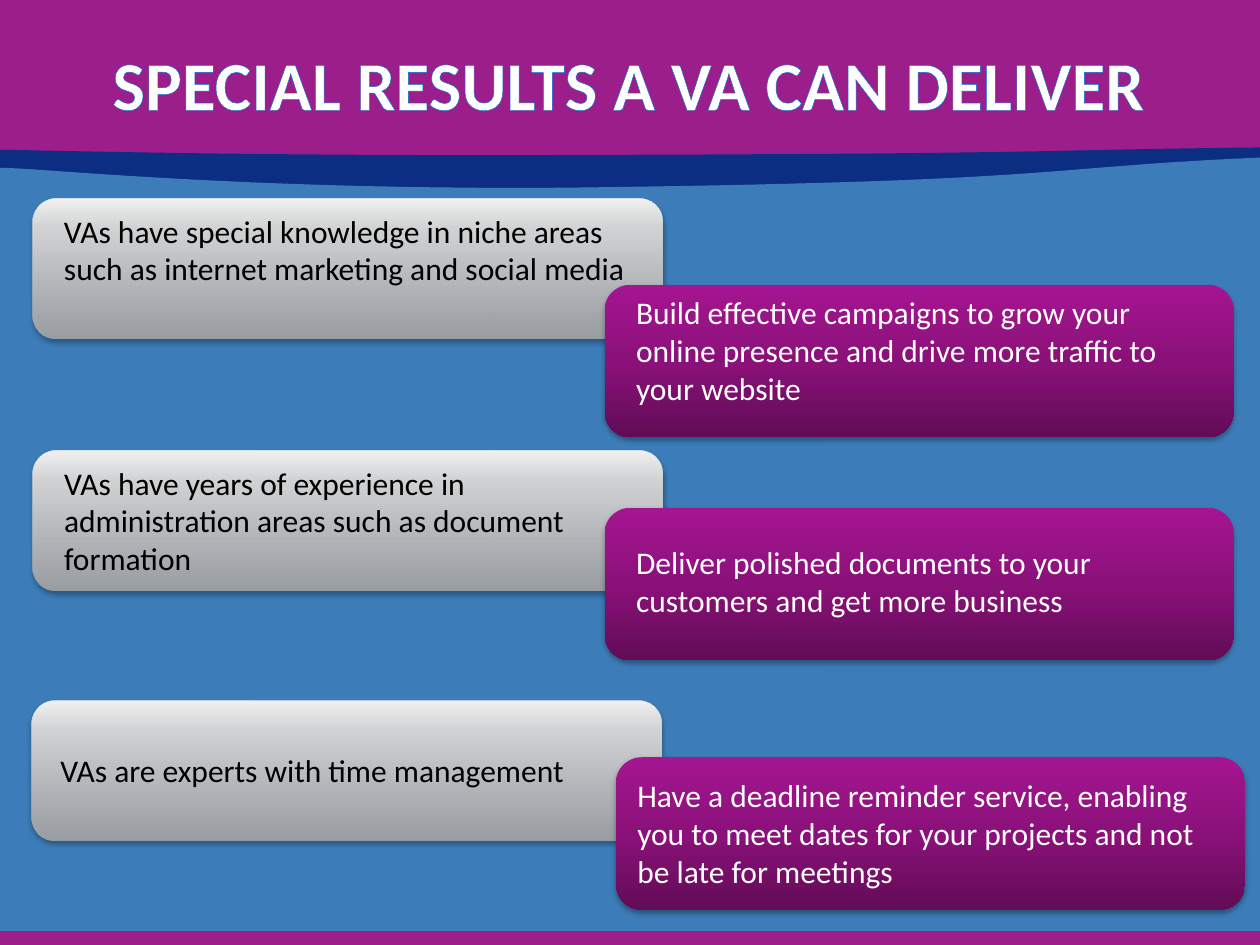
from lxml.etree import SubElement as Sub
from pptx import Presentation
from pptx.dml.color import RGBColor as RGB
from pptx.enum.shapes import MSO_SHAPE as Shape
from pptx.enum.text import MSO_ANCHOR as Anchor, PP_ALIGN as Align
from pptx.oxml.ns import qn
from pptx.util import Inches, Pt

PLUM = RGB(0x9C, 0x1E, 0x8A)
NAVY = RGB(0x0B, 0x2E, 0x82)
BLUE = RGB(0x3C, 0x7D, 0xB9)
EDGE = RGB(0x00, 0x70, 0xD5)
WHITE = RGB(0xFF, 0xFF, 0xFF)
BLACK = RGB(0x00, 0x00, 0x00)

SILVER = [(0, RGB(0xF2, 0xF2, 0xF2), 100), (20, RGB(0xD9, 0xD9, 0xD9), 96),
          (100, RGB(0xA6, 0xA6, 0xA6), 89)]
GRAPE = [(0, RGB(0xA5, 0x15, 0x91), 100), (50, RGB(0x8B, 0x11, 0x7A), 100),
         (100, RGB(0x62, 0x0C, 0x56), 100)]

LEFT = {"size": (5, 1.11), "stops": SILVER, "color": BLACK}
RIGHT = {"size": (4.99, 1.21), "stops": GRAPE, "color": WHITE}
BODY = {"name": "Calibri", "size": Pt(18)}
HEAD = {"name": "Calibri", "size": Pt(39.6), "bold": True}

CARDS = [
    (LEFT, (0.26, 1.58), (0.41, 1.63, 4.67, 0.71),
     "VAs have special knowledge in niche areas such as internet marketing and social media"),
    (RIGHT, (4.8, 2.26), (4.95, 2.28, 4.5, 1.01),
     "Build effective campaigns to grow your online presence and drive more traffic to your website"),
    (LEFT, (0.26, 3.58), (0.41, 3.63, 4.72, 1.01),
     "VAs have years of experience in administration areas such as document formation"),
    (RIGHT, (4.8, 4.03), (4.95, 4.26, 4.41, 0.71),
     "Deliver polished documents to your customers and get more business"),
    (LEFT, (0.25, 5.56), (0.38, 5.91, 4.72, 0.4),
     "VAs are experts with time management"),
    (RIGHT, (4.89, 6.01), (4.96, 6.11, 4.67, 1.01),
     "Have a deadline reminder service, enabling you to meet dates for your projects and not be late for meetings"),
]

NAVY_TOP = [(-0.03, 1.19), (-0.03, 1.18), (1.61, 1.24), (4.48, 1.23),
            (8.52, 1.22), (8.16, 1.19), (10, 1.17)]
BLUE_TOP = [(-0.03, 1.34), (-0.03, 1.29), (1.61, 1.51), (4.49, 1.49),
            (8.53, 1.44), (8.17, 1.33), (10.01, 1.25)]


def paint(shape, color):
    """Give a shape a flat fill with no line or shadow."""
    shape.shadow.inherit = False
    shape.fill.solid()
    shape.fill.fore_color.rgb = color
    shape.line.fill.background()


def add_bar(shapes, box, color):
    """Add a flat rectangle."""
    paint(shapes.add_shape(Shape.RECTANGLE, *map(Inches, box)), color)


def curve(knots, steps=24):
    """Return points along a chain of cubic curves."""
    points = [knots[0]]
    for i in range(0, len(knots) - 1, 3):
        for n in range(1, steps + 1):
            t = n / steps
            u = 1 - t
            parts = (u ** 3, 3 * u * u * t, 3 * u * t * t, t ** 3)
            points.append(tuple(sum(w * p[axis] for w, p in zip(parts, knots[i:i + 4]))
                                for axis in (0, 1)))
    return points


def add_wave(shapes, knots, base, color):
    """Add a block with a curved top edge and a flat base."""
    points = curve(knots) + [(knots[-1][0], base), (knots[0][0], base)]
    first, *rest = [(Inches(x), Inches(y)) for x, y in points]
    pen = shapes.build_freeform(*first)
    pen.add_line_segments(rest, close=True)
    paint(pen.convert_to_shape(), color)


def add_tint(node, color, alpha):
    """Add a colour with its opacity in percent to an XML node."""
    tint = Sub(node, qn("a:srgbClr"), val=str(color))
    if alpha < 100:
        Sub(tint, qn("a:alpha"), val=str(alpha * 1000))


def shade(shape, stops):
    """Fill a shape from top to bottom and add a soft shadow."""
    shape.fill.gradient()
    shape.fill.gradient_angle = 270
    shape.line.fill.background()
    shape.shadow.inherit = False
    props = shape.element.spPr
    ramp = props.find(".//" + qn("a:gsLst"))
    for old in list(ramp):
        ramp.remove(old)
    for place, color, alpha in stops:
        add_tint(Sub(ramp, qn("a:gs"), pos=str(place * 1000)), color, alpha)
    drop = Sub(props.find(qn("a:effectLst")), qn("a:outerShdw"), blurRad=str(Pt(3.1)),
               dist=str(Pt(1.8)), dir="5400000", rotWithShape="0")
    add_tint(drop, BLACK, 35)


def add_text(shapes, box, text, style, color):
    """Add a wrapped text box and return it with its run."""
    label = shapes.add_textbox(*map(Inches, box))
    label.text_frame.word_wrap = True
    run = label.text_frame.paragraphs[0].add_run()
    run.text = text
    for key, value in style.items():
        setattr(run.font, key, value)
    run.font.color.rgb = color
    return label, run


def add_title(shapes, box, text):
    """Add the centred title with outlined letters."""
    label, run = add_text(shapes, box, text, HEAD, WHITE)
    label.text_frame.vertical_anchor = Anchor.MIDDLE
    label.text_frame.paragraphs[0].alignment = Align.CENTER
    props = run.font.fill and run._r.get_or_add_rPr()
    line = props.makeelement(qn("a:ln"), {"w": str(Pt(1))})
    add_tint(Sub(line, qn("a:solidFill")), EDGE, 100)
    props.insert(0, line)


def add_card(shapes, kind, spot, box, text):
    """Add a grouped rounded card and its text."""
    group = shapes.add_group_shape().shapes
    card = group.add_shape(Shape.ROUNDED_RECTANGLE, *map(Inches, spot + kind["size"]))
    shade(card, kind["stops"])
    add_text(group, box, text, BODY, kind["color"])


def main():
    """Build and save the slide."""
    deck = Presentation()
    deck.slide_width, deck.slide_height = Inches(10), Inches(7.5)
    shapes = deck.slides.add_slide(deck.slide_layouts[6]).shapes
    add_bar(shapes, (-0.03, 0, 10.04, 1.75), PLUM)
    add_wave(shapes, NAVY_TOP, 2.92, NAVY)
    add_wave(shapes, BLUE_TOP, 7.5, BLUE)
    add_bar(shapes, (-0.03, 7.39, 10.04, 0.17), PLUM)
    add_title(shapes, (0.49, 0.03, 9, 1.25), "SPECIAL RESULTS A VA CAN DELIVER")
    for card in CARDS:
        add_card(shapes, *card)
    deck.save("out.pptx")


if __name__ == "__main__":
    main()
